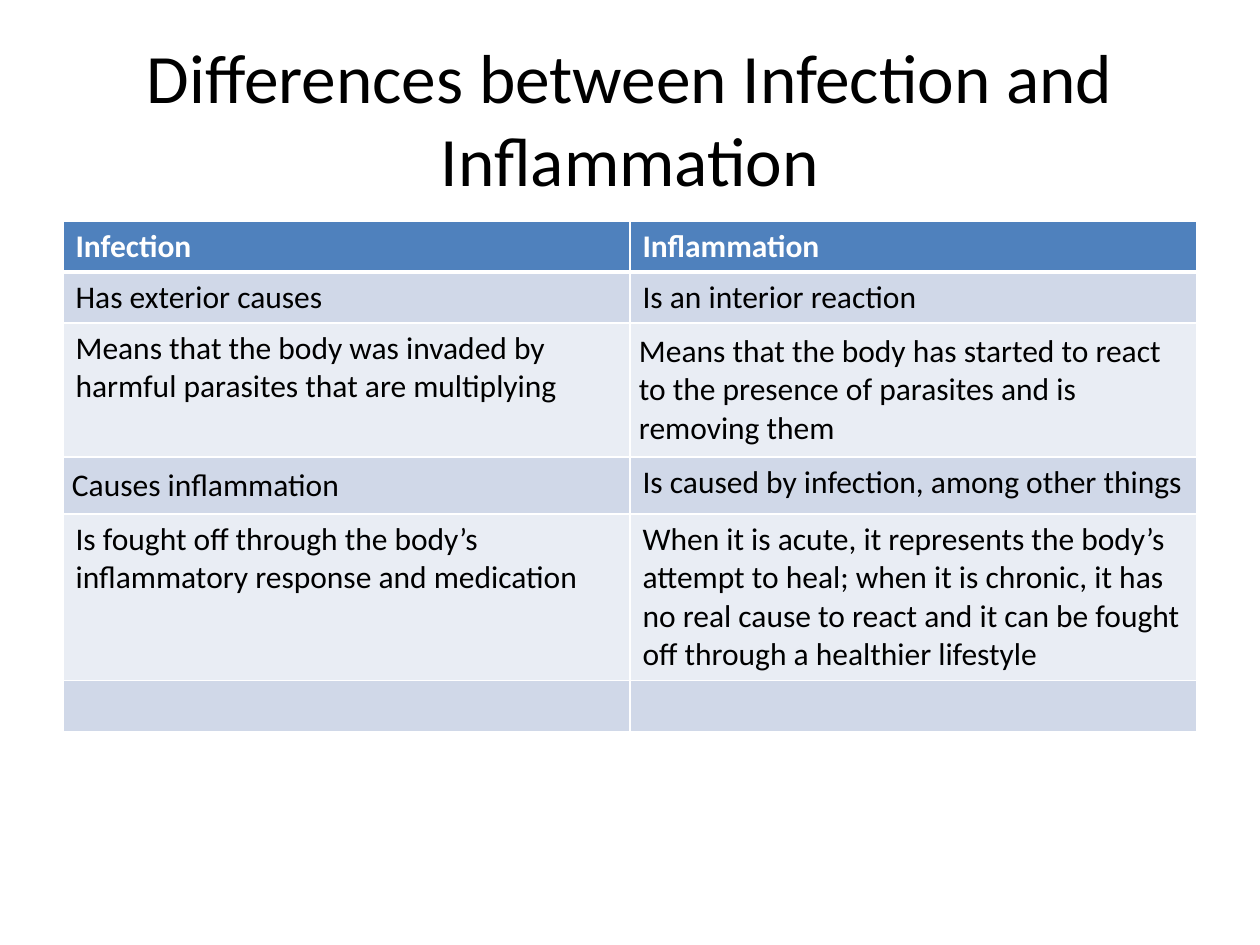
from lxml.etree import SubElement
from pptx import Presentation
from pptx.dml.color import RGBColor
from pptx.enum.text import MSO_ANCHOR, MSO_AUTO_SIZE, PP_ALIGN
from pptx.oxml.ns import qn
from pptx.util import Pt

PX = 914400 / 126
FONT = "Calibri"
BLACK = RGBColor(0x00, 0x00, 0x00)
WHITE = RGBColor(0xFF, 0xFF, 0xFF)
HEADER_BLUE = RGBColor(0x4F, 0x81, 0xBD)
BANDS = [RGBColor(0xE9, 0xED, 0xF4), RGBColor(0xD0, 0xD8, 0xE8)]

ROWS = [
    ("Infection", "Inflammation"),
    ("Has exterior causes", "Is an interior reaction"),
    ("Means that the body was invaded by harmful parasites that are multiplying",
     "Means that the body has started to react to the presence of parasites and is removing them"),
    ("Causes inflammation", "Is caused by infection, among other things"),
    ("Is fought off through the body’s inflammatory response and medication",
     "When it is acute, it represents the body’s attempt to heal; when it is chronic, "
     "it has no real cause to react and it can be fought off through a healthier lifestyle"),
    ("", ""),
]
ROW_HEIGHTS = [51, 51, 134, 57, 166, 51]
CENTERED_CELLS = {(2, 1), (3, 0)}


def px(length):
    return round(length * PX)


def format_text(paragraph, size, color, bold=False):
    for run in paragraph.runs:
        run.font.name = FONT
        run.font.size = Pt(size)
        run.font.bold = bold
        run.font.color.rgb = color


def add_title(slide, left, top, width, height):
    title = slide.shapes.title
    title.left, title.top, title.width, title.height = map(px, (left, top, width, height))
    text_frame = title.text_frame
    text_frame.text = "Differences between Infection and Inflammation"
    text_frame.word_wrap = True
    text_frame.auto_size = MSO_AUTO_SIZE.NONE
    text_frame.vertical_anchor = MSO_ANCHOR.MIDDLE
    paragraph = text_frame.paragraphs[0]
    paragraph.alignment = PP_ALIGN.CENTER
    format_text(paragraph, 39.6, BLACK)


def set_borders(cell, widths):
    properties = cell._tc.get_or_add_tcPr()
    for side, width in widths.items():
        line = SubElement(properties, qn(f"a:ln{side}"), w=str(Pt(width)))
        fill = SubElement(line, qn("a:solidFill"))
        SubElement(fill, qn("a:srgbClr"), val=str(WHITE))


def format_cell(cell, row, column):
    is_header = row == 0
    set_borders(cell, {"L": 1, "R": 1, "T": 3 if row == 1 else 1, "B": 3 if is_header else 1})
    cell.fill.solid()
    cell.fill.fore_color.rgb = HEADER_BLUE if is_header else BANDS[row % 2]
    if (row, column) in CENTERED_CELLS:
        cell.vertical_anchor = MSO_ANCHOR.MIDDLE
        cell.margin_left = cell.margin_right = cell.margin_top = cell.margin_bottom = px(9)
    format_text(cell.text_frame.paragraphs[0], 18, WHITE if is_header else BLACK, is_header)


def add_comparison_table(slide, left, top, width):
    frame = slide.shapes.add_table(
        len(ROWS), len(ROWS[0]), px(left), px(top), px(width), px(sum(ROW_HEIGHTS)))
    table = frame.table
    for column in table.columns:
        column.width = px(width / len(ROWS[0]))
    for row, (texts, height) in enumerate(zip(ROWS, ROW_HEIGHTS)):
        table.rows[row].height = px(height)
        for column, text in enumerate(texts):
            cell = table.cell(row, column)
            cell.text = text
            format_cell(cell, row, column)


def main():
    presentation = Presentation()
    presentation.slide_width, presentation.slide_height = px(1260), px(945)
    slide = presentation.slides.add_slide(presentation.slide_layouts[5])
    add_title(slide, 63, 38, 1134, 158)
    add_comparison_table(slide, 63, 221, 1134)
    presentation.save("out.pptx")


if __name__ == "__main__":
    main()
